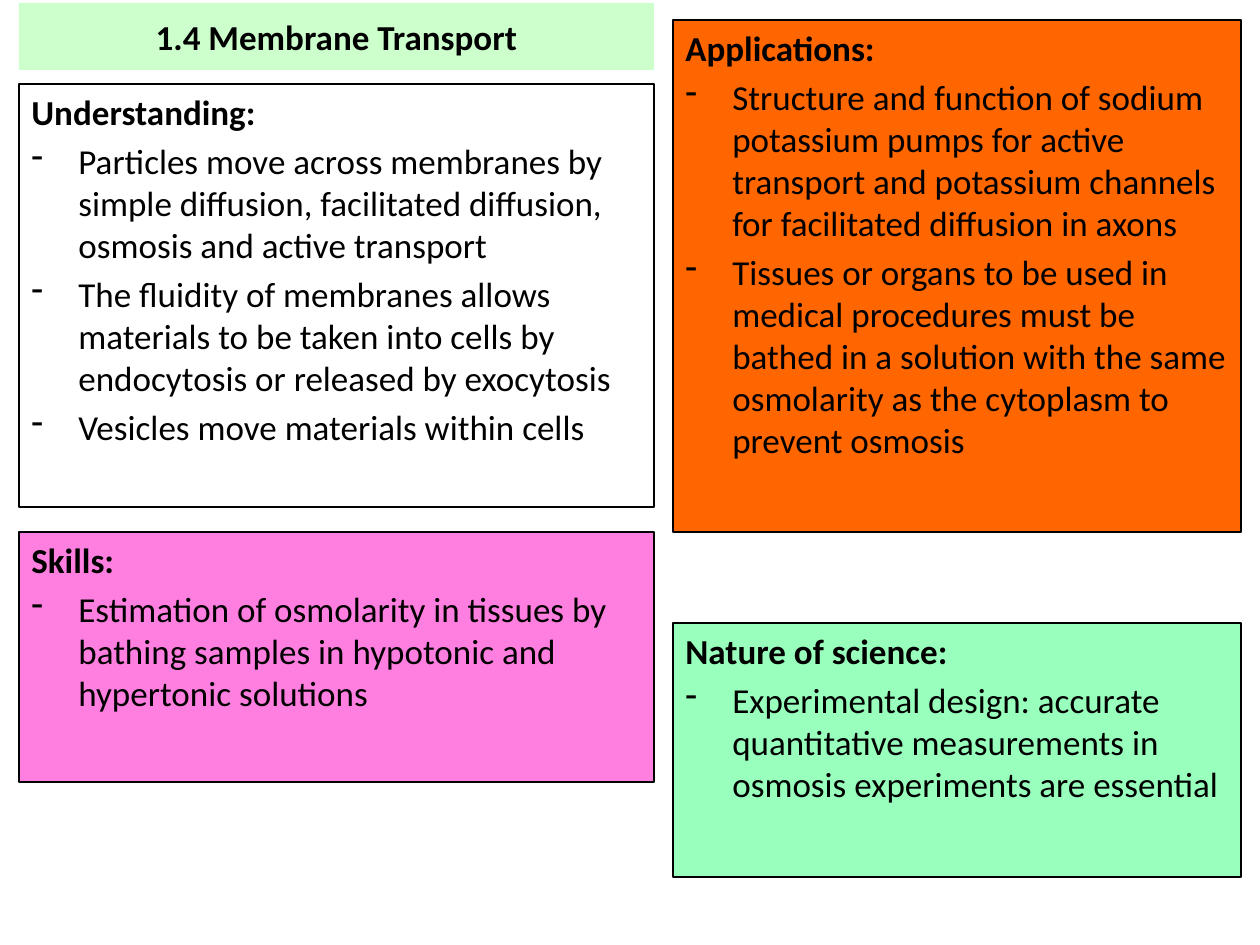
import pptx
import pptx.dml.color
import pptx.enum.shapes
import pptx.enum.text
import pptx.oxml.ns
import pptx.util
import lxml.etree

RGBColor = pptx.dml.color.RGBColor
BLACK = RGBColor(0x00, 0x00, 0x00)
PALE_GREEN = RGBColor(0xCC, 0xFF, 0xCC)
ORANGE = RGBColor(0xFF, 0x66, 0x00)
PINK = RGBColor(0xFF, 0x7F, 0xE1)
MINT = RGBColor(0x98, 0xFF, 0xBC)

TITLE = "1.4 Membrane Transport"
LEFT_COLUMN = (19, 635)
RIGHT_COLUMN = (673, 568)
PANELS = [
    (LEFT_COLUMN, 84, 423, None, "Understanding:", [
        "Particles move across membranes by simple diffusion, facilitated diffusion, osmosis and active transport",
        "The fluidity of membranes allows materials to be taken into cells by endocytosis or released by exocytosis",
        "Vesicles move materials within cells",
    ]),
    (RIGHT_COLUMN, 20, 512, ORANGE, "Applications:", [
        "Structure and function of sodium potassium pumps for active transport and potassium channels for facilitated diffusion in axons",
        "Tissues or organs to be used in medical procedures must be bathed in a solution with the same osmolarity as the cytoplasm to prevent osmosis",
    ]),
    (LEFT_COLUMN, 532, 250, PINK, "Skills:", [
        "Estimation of osmolarity in tissues by bathing samples in hypotonic and hypertonic solutions",
    ]),
    (RIGHT_COLUMN, 623, 254, MINT, "Nature of science:", [
        "Experimental design: accurate quantitative measurements in osmosis experiments are essential",
    ]),
]
INDENT = 47


def px(length):
    return pptx.util.Emu(round(length * 914400 / 126))


def add_box(page, column, top, height, fill, line, anchor):
    left, width = column
    box = page.shapes.add_shape(
        pptx.enum.shapes.MSO_SHAPE.RECTANGLE, px(left), px(top), px(width), px(height))
    box.shadow.inherit = False
    if fill is None:
        box.fill.background()
    else:
        box.fill.solid()
        box.fill.fore_color.rgb = fill
    if line is None:
        box.line.fill.background()
    else:
        box.line.color.rgb = line
        box.line.width = pptx.util.Pt(0.75)
    box.text_frame.word_wrap = True
    box.text_frame.vertical_anchor = anchor
    return box


def style(para, alignment, bold):
    para.alignment = alignment
    para.font.name = "Calibri"
    para.font.size = pptx.util.Pt(20)
    para.font.bold = bold
    para.font.color.rgb = BLACK


def add_dash(para):
    properties = para._p.get_or_add_pPr()
    properties.set("marL", str(px(INDENT)))
    properties.set("indent", str(-px(INDENT)))
    bullet = lxml.etree.SubElement(properties, pptx.oxml.ns.qn("a:buChar"))
    bullet.set("char", "-")


def add_panel(page, column, top, height, fill, heading, points):
    frame = add_box(page, column, top, height, fill, BLACK,
                    pptx.enum.text.MSO_ANCHOR.TOP).text_frame
    for index, text in enumerate([heading] + points):
        para = frame.add_paragraph() if index else frame.paragraphs[0]
        para.text = text
        para.space_before = pptx.util.Pt(4)
        if index:
            add_dash(para)
        style(para, pptx.enum.text.PP_ALIGN.LEFT, index == 0)


def main():
    deck = pptx.Presentation()
    deck.slide_width, deck.slide_height = px(1260), px(945)
    page = deck.slides.add_slide(deck.slide_layouts[6])
    title = add_box(page, LEFT_COLUMN, 3, 67, PALE_GREEN, None,
                    pptx.enum.text.MSO_ANCHOR.MIDDLE)
    title.text_frame.text = TITLE
    style(title.text_frame.paragraphs[0], pptx.enum.text.PP_ALIGN.CENTER, True)
    for panel in PANELS:
        add_panel(page, *panel)
    deck.save("out.pptx")


if __name__ == "__main__":
    main()
